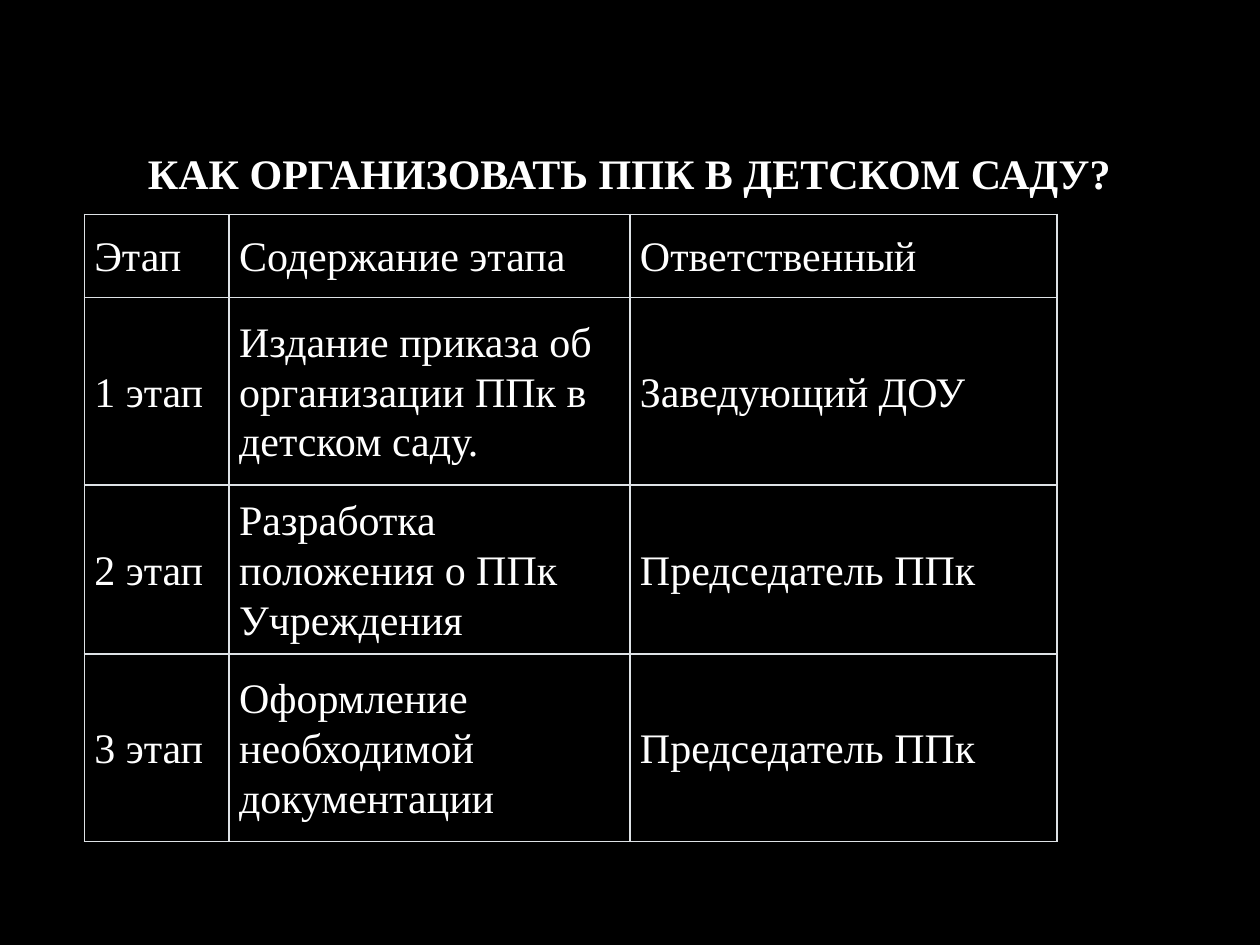
import pptx
import pptx.dml.color
import pptx.enum.text
import pptx.oxml
import pptx.oxml.ns
import pptx.util

Cm = pptx.util.Cm
Pt = pptx.util.Pt
RGB = pptx.dml.color.RGBColor
ALIGN = pptx.enum.text.PP_ALIGN
MIDDLE = pptx.enum.text.MSO_ANCHOR.MIDDLE

BLACK = RGB(0x00, 0x00, 0x00)
WHITE = RGB(0xFF, 0xFF, 0xFF)
GREY = RGB(0xDE, 0xE2, 0xE6)

TITLE = "КАК ОРГАНИЗОВАТЬ ППК В ДЕТСКОМ САДУ?"
STAGES = [
    ("Этап", "Содержание этапа", "Ответственный"),
    ("1 этап", "Издание приказа об организации ППк в детском саду.", "Заведующий ДОУ"),
    ("2 этап", "Разработка положения о ППк Учреждения", "Председатель ППк"),
    ("3 этап", "Оформление необходимой документации", "Председатель ППк"),
]
WIDTHS = [2.92, 8.08, 8.61]
HEIGHTS = [1.68, 3.78, 2.74, 3.78]


class Deck:
    face = "Times New Roman"
    size = Pt(24)
    inset = Cm(0.2)
    gap = Pt(18)

    def __init__(self, show):
        self.slide = show.slides.add_slide(show.slide_layouts[5])
        fill = self.slide.background.fill
        fill.solid()
        fill.fore_color.rgb = BLACK

    def style(self, para, lead, align, bold=False):
        para.line_spacing = lead
        para.alignment = align
        font = para.font
        font.name, font.size, font.bold = self.face, self.size, bold
        font.color.rgb = WHITE

    def title(self, text, left, top, width, height):
        box = self.slide.shapes.title
        box.left, box.top = Cm(left), Cm(top)
        box.width, box.height = Cm(width), Cm(height)
        frame = box.text_frame
        frame.text = text
        frame.word_wrap = True
        frame.vertical_anchor = MIDDLE
        self.style(frame.paragraphs[0], 0.9, ALIGN.CENTER, True)

    def table(self, data, left, top, widths, heights):
        grid = self.slide.shapes.add_table(
            len(heights), len(widths), Cm(left), Cm(top),
            Cm(sum(widths)), Cm(sum(heights))).table
        grid.first_row = grid.horz_banding = False
        for col, width in zip(grid.columns, widths):
            col.width = Cm(width)
        for row, height, texts in zip(grid.rows, heights, data):
            row.height = Cm(height)
            for cell, text in zip(row.cells, texts):
                self.cell(cell, text)

    def cell(self, cell, text):
        cell.text = text
        cell.vertical_anchor = MIDDLE
        cell.margin_left = cell.margin_right = self.inset
        cell.margin_top = cell.margin_bottom = self.inset
        para = cell.text_frame.paragraphs[0]
        self.style(para, 1.07, ALIGN.LEFT)
        para.space_before = para.space_after = self.gap
        cell.fill.background()
        self.edge(cell)

    def edge(self, cell):
        """Draw a thin line on all four sides of the cell."""
        props = cell._tc.get_or_add_tcPr()
        for spot, side in enumerate("LRTB"):
            props.insert(spot, pptx.oxml.parse_xml(
                f'<a:ln{side} {pptx.oxml.ns.nsdecls("a")} w="{Pt(1)}">'
                f'<a:solidFill><a:srgbClr val="{GREY}"/></a:solidFill>'
                f'</a:ln{side}>'))


def main():
    show = pptx.Presentation()
    show.slide_width, show.slide_height = Cm(25.4), Cm(19.05)
    deck = Deck(show)
    deck.title(TITLE, 1.91, 1.7, 21.56, 3.68)
    deck.table(STAGES, 1.7, 4.32, WIDTHS, HEIGHTS)
    show.save("out.pptx")


if __name__ == "__main__":
    main()
